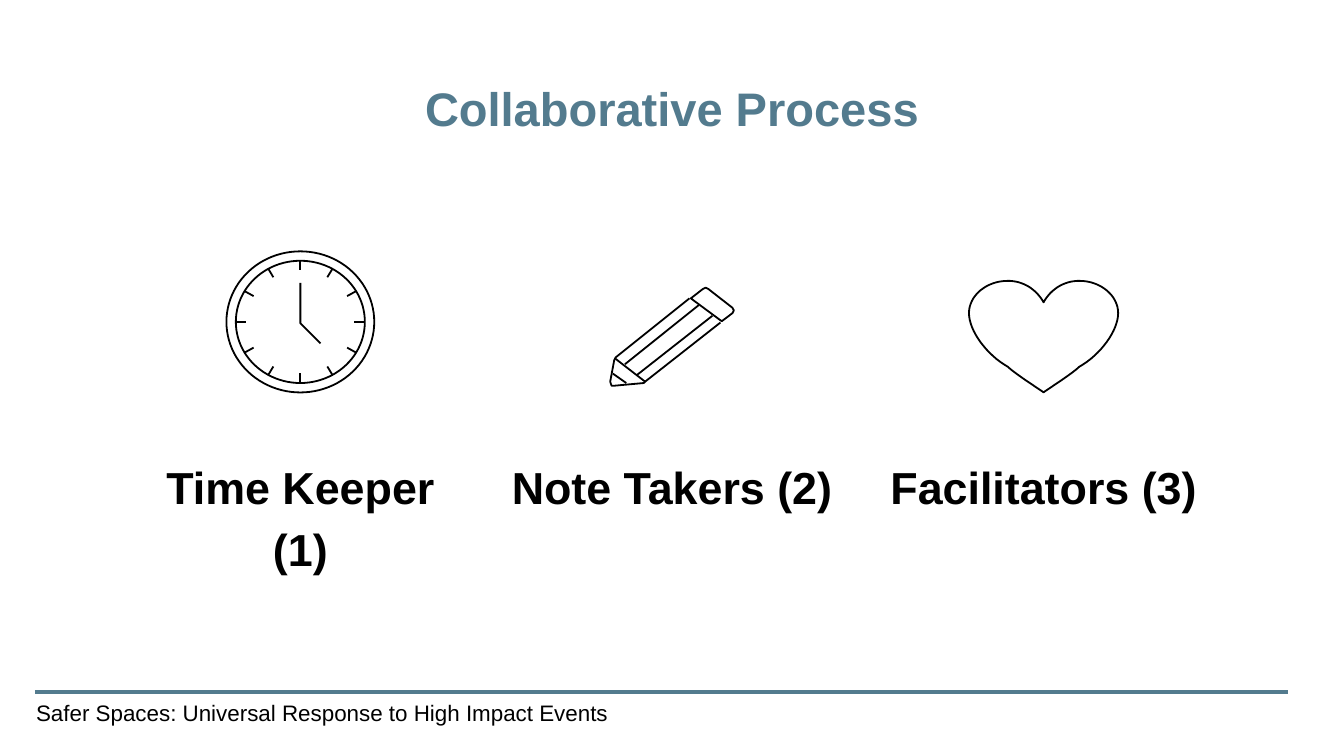
from math import cos, radians, sin

from lxml import etree
from pptx import Presentation
from pptx.dml.color import RGBColor
from pptx.enum.shapes import MSO_CONNECTOR as Connector, MSO_SHAPE as Shape
from pptx.enum.text import MSO_ANCHOR as Anchor, MSO_AUTO_SIZE as AutoSize, PP_ALIGN as Align
from pptx.oxml.ns import qn
from pptx.util import Inches, Pt

BLACK = RGBColor(0x00, 0x00, 0x00)
TEAL = RGBColor(0x53, 0x7B, 0x8E)
ICON_LINE = 0.96

ERASER = [(91, 15), (73, 1), (71, 0), (69, 1), (60, 8), (83, 25), (91, 19), (92, 17)]
PENCIL_BODY = [(59, 8), (4, 52), (3, 54), (0, 70), (1, 73), (3, 73), (25, 71), (26, 70), (82, 26)]
PENCIL_STRIPES = [((76, 21), (20, 65)), ((11, 57), (66, 13)), ((12, 71), (2, 64)), ((4, 53), (26, 70))]
HEART_WIDTH = 111
HEART_CURVES = [
    ((55.5, 16), (50, 6), (40, 0), (29, 0)),
    ((29, 0), (13, 0), (0, 11), (0, 24)),
    ((0, 24), (0, 37), (13, 55), (29, 64)),
    ((29, 64), (34, 69), (53, 81), (55.5, 83)),
]


def add_text(page, box, text, size, bold=False, color=BLACK, align=Align.CENTER, anchor=Anchor.TOP):
    """Place one paragraph of text in the box and return its shape."""
    shape = page.shapes.add_textbox(*map(Inches, box))
    frame = shape.text_frame
    frame.word_wrap = True
    frame.vertical_anchor = anchor
    frame.margin_top = frame.margin_bottom = Inches(0.1)
    para = frame.paragraphs[0]
    para.text = text
    para.alignment = align
    font = para.runs[0].font
    font.name, font.size, font.bold = "Arial", Pt(size), bold
    font.color.rgb = color
    return shape


def add_stroke(page, start, end, color=BLACK, width=ICON_LINE):
    """Draw a straight line between two points in inches."""
    line = page.shapes.add_connector(Connector.STRAIGHT, *map(Inches, (*start, *end)))
    line.line.color.rgb = color
    line.line.width = Pt(width)
    etree.SubElement(line._element.spPr, qn("a:effectLst"))


def style_outline(shape):
    """Leave the shape unfilled with a thin black line."""
    shape.shadow.inherit = False
    shape.fill.background()
    shape.line.color.rgb = BLACK
    shape.line.width = Pt(ICON_LINE)


def add_outline(page, left, top, points, close):
    """Trace points given in hundredths of an inch from the corner."""
    fine = [(round(x * 100), round(y * 100)) for x, y in points]
    builder = page.shapes.build_freeform(*fine[0], scale=Inches(1) / 10000)
    builder.add_line_segments(fine[1:], close=close)
    style_outline(builder.convert_to_shape(Inches(left), Inches(top)))


def add_clock(page, left, top):
    """Draw a clock with a rim, twelve ticks and two hands."""
    width, height, rim = 1.1, 1.05, 0.07
    center_x, center_y = left + width / 2, top + height / 2
    for inset in (0, rim):
        box = (left + inset, top + inset, width - 2 * inset, height - 2 * inset)
        style_outline(page.shapes.add_shape(Shape.OVAL, *map(Inches, box)))
    for hour in range(12):
        angle = radians(30 * hour)
        outer, inner = [
            (center_x + reach * width / 2 * sin(angle), center_y - reach * height / 2 * cos(angle))
            for reach in (0.87, 0.73)
        ]
        add_stroke(page, outer, inner)
    add_outline(page, center_x, center_y - 0.29, [(0, 0), (0, 30), (15, 45)], close=False)


def add_pencil(page, left, top):
    """Draw a slanted pencil with its eraser and stripes."""
    add_outline(page, left, top, ERASER, close=True)
    add_outline(page, left, top, PENCIL_BODY, close=False)
    for stripe in PENCIL_STRIPES:
        add_stroke(page, *[(left + x / 100, top + y / 100) for x, y in stripe])


def sample_curve(curve, steps=16):
    """Return points along a cubic curve, without its last one."""
    points = []
    for step in range(steps):
        t = step / steps
        weights = ((1 - t) ** 3, 3 * t * (1 - t) ** 2, 3 * t ** 2 * (1 - t), t ** 3)
        points.append(tuple(sum(w * v for w, v in zip(weights, axis)) for axis in zip(*curve)))
    return points


def add_heart(page, left, top):
    """Draw a heart from one half and its mirror."""
    half = [point for curve in HEART_CURVES for point in sample_curve(curve)]
    mirrored = [(HEART_WIDTH - x, y) for x, y in reversed(half[1:])]
    add_outline(page, left, top, half + [HEART_CURVES[-1][-1]] + mirrored, close=True)


def add_roles(page, left, top):
    """Lay out three columns, each with an icon above a role."""
    width, pitch = 2.63, 2.765
    roles = [
        ("Time Keeper (1)", add_clock, 1.1, 0),
        ("Note Takers (2)", add_pencil, 0.92, 0.27),
        ("Facilitators (3)", add_heart, HEART_WIDTH / 100, 0.22),
    ]
    for column, (role, add_icon, icon_width, drop) in enumerate(roles):
        column_left = left + column * pitch
        add_icon(page, column_left + (width - icon_width) / 2, top + drop)
        label = add_text(page, (column_left, top + 1.39, width, 1.76), role, 24, bold=True)
        label.text_frame.paragraphs[0].line_spacing = 1.15


def add_footer(page, left, top):
    """Draw the rule and the event name below it."""
    add_stroke(page, (left, top), (left + 9.32, top), TEAL, 2.25)
    name = add_text(page, (left - 0.09, top, 5, 0.3),
                    "Safer Spaces: Universal Response to High Impact Events", 12, align=Align.LEFT)
    name.text_frame.margin_top = name.text_frame.margin_bottom = Inches(0.05)
    name.text_frame.auto_size = AutoSize.SHAPE_TO_FIT_TEXT


def main():
    """Build the slide and save the deck."""
    deck = Presentation()
    deck.slide_width = Inches(10)
    deck.slide_height = deck.slide_width * 9 // 16
    page = deck.slides.add_slide(deck.slide_layouts[6])
    add_footer(page, 0.26, 5.15)
    add_text(page, (0.34, 0.49, 9.32, 0.63), "Collaborative Process", 25.2, True, TEAL, anchor=Anchor.MIDDLE)
    add_roles(page, 0.92, 1.87)
    deck.save("out.pptx")


if __name__ == "__main__":
    main()
